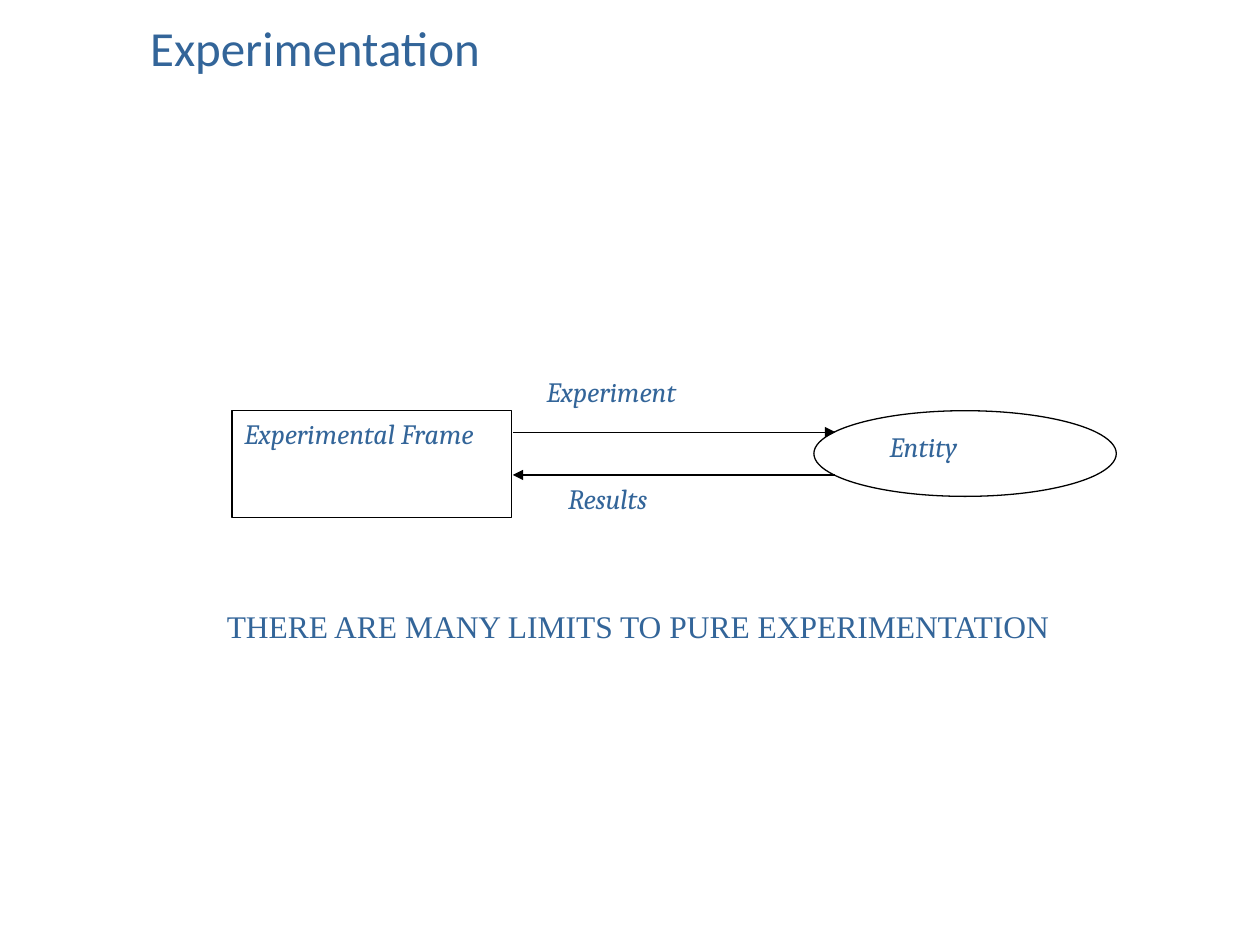
from pptx import Presentation
from pptx.dml.color import RGBColor
from pptx.enum import shapes, text
from pptx.oxml import parse_xml
from pptx.oxml import ns
from pptx.util import Inches, Pt

COLORS = {"text": "336599", "line": "000000", "fill": "FFFFFF"}
TITLE_FONT = {"name": "Calibri", "size": Pt(28)}
LABEL_FONT = {"name": "Cambria", "size": Pt(16), "italic": True}
REMARK_FONT = {"name": "Times New Roman", "size": Pt(18)}


def color(key):
    """Return the named colour."""
    return RGBColor.from_string(COLORS[key])


def write(holder, words, font, anchor="TOP", align="LEFT", indent=0.1):
    """Write one formatted paragraph in a shape or text box."""
    frame = holder.text_frame
    layout = {
        "word_wrap": True,
        "vertical_anchor": getattr(text.MSO_ANCHOR, anchor),
        "margin_left": Inches(indent),
    }
    for key, value in layout.items():
        setattr(frame, key, value)
    paragraph = frame.paragraphs[0]
    paragraph.text = words
    paragraph.alignment = getattr(text.PP_ALIGN, align)
    for key, value in font.items():
        setattr(paragraph.font, key, value)
    paragraph.font.color.rgb = color("text")


def add_text(slide, box, words, font, **layout):
    """Place a text box."""
    holder = slide.shapes.add_textbox(*map(Inches, box))
    write(holder, words, font, **layout)


def add_node(slide, box, words, kind="RECTANGLE", outlined=False, indent=0.1):
    """Place a white labelled shape, outlined if asked."""
    preset = getattr(shapes.MSO_SHAPE, kind)
    node = slide.shapes.add_shape(preset, *map(Inches, box))
    node.shadow.inherit = False
    node.fill.solid()
    node.fill.fore_color.rgb = color("fill")
    if outlined:
        node.line.color.rgb = color("line")
        node.line.width = Pt(0.75)
    else:
        node.line.fill.background()
    write(node, words, LABEL_FONT, indent=indent)


def add_arrow(slide, start, end, y):
    """Draw a horizontal arrow from start to end."""
    ends = map(Inches, (start, y, end, y))
    arrow = slide.shapes.add_connector(shapes.MSO_CONNECTOR.STRAIGHT, *ends)
    arrow.line.color.rgb = color("line")
    arrow.line.width = Pt(0.75)
    head = f'<a:tailEnd {ns.nsdecls("a")} type="triangle"/>'
    arrow.line._get_or_add_ln().append(parse_xml(head))
    effects = f'<a:effectLst {ns.nsdecls("a")}/>'
    arrow._element.spPr.append(parse_xml(effects))


def add_experiment_loop(slide, left, top):
    """Draw the exchange between the experimental frame and the entity."""
    frame_top = top + 0.34
    frame_right, entity_edge = left + 2.23, left + 4.79
    add_node(slide, (left + 2.57, top + 0.85, 1.88, 0.51), "Results")
    add_node(slide, (left + 2.4, top, 1.88, 0.69), "Experiment")
    add_node(slide, (left, frame_top, 2.22, 0.85), "Experimental Frame",
             outlined=True)
    add_node(slide, (left + 4.62, frame_top, 2.4, 0.68), "Entity",
             kind="OVAL", outlined=True, indent=0.25)
    add_arrow(slide, frame_right, entity_edge, top + 0.51)
    add_arrow(slide, entity_edge, frame_right, top + 0.85)


def main():
    """Build and save the slide."""
    deck = Presentation()
    deck.slide_width, deck.slide_height = Inches(10), Inches(7.5)
    slide = deck.slides.add_slide(deck.slide_layouts[6])
    add_text(slide, (0, 0, 5, 0.75), "Experimentation", TITLE_FONT,
             anchor="MIDDLE", align="CENTER")
    add_experiment_loop(slide, 1.84, 2.92)
    add_text(slide, (1.46, 4.77, 7.17, 0.4),
             "THERE ARE MANY LIMITS TO PURE EXPERIMENTATION", REMARK_FONT,
             indent=0.34)
    deck.save("out.pptx")


if __name__ == "__main__":
    main()
